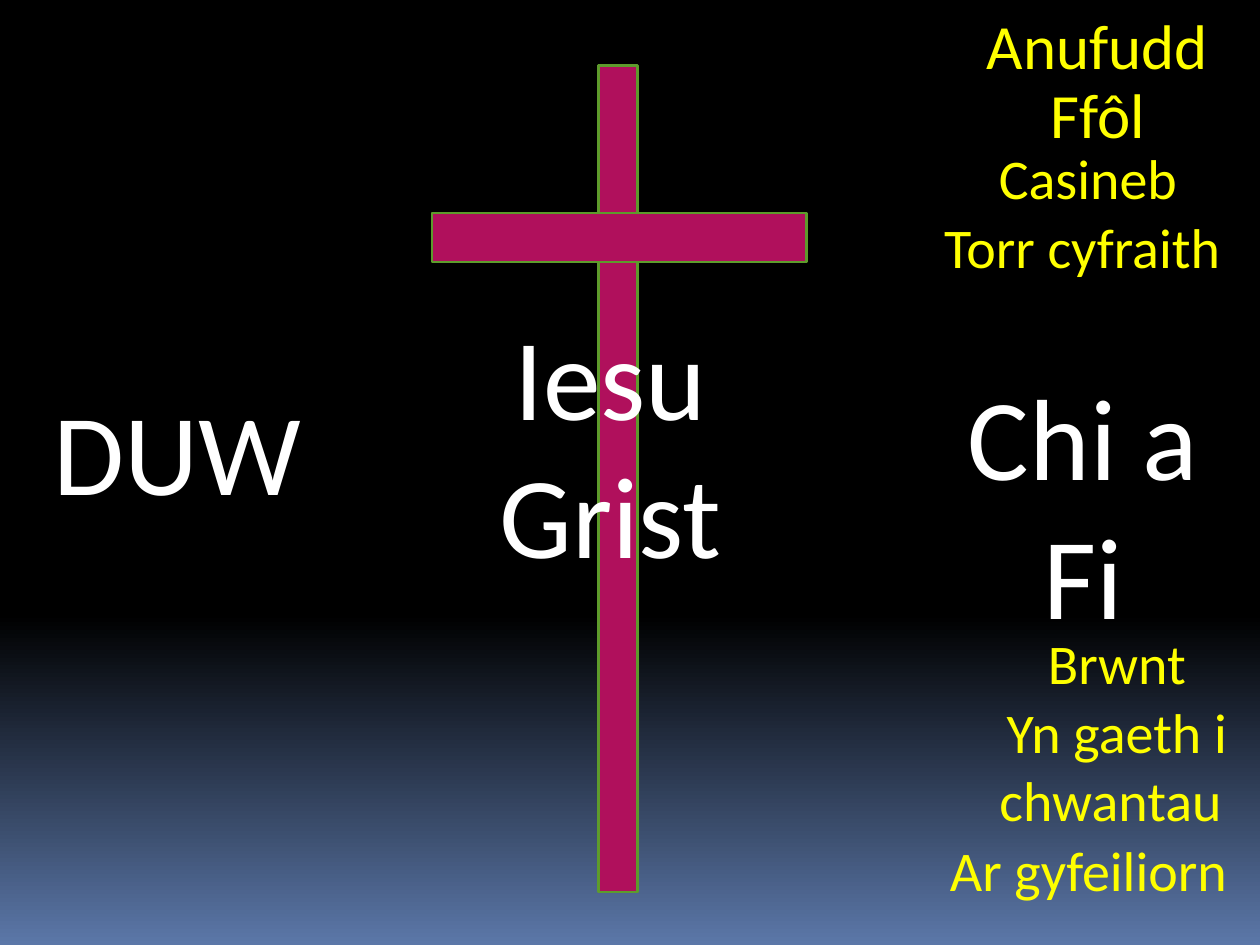
from pptx import Presentation
from pptx.dml.color import RGBColor
from pptx.enum.shapes import MSO_SHAPE
from pptx.enum.text import MSO_AUTO_SIZE, PP_ALIGN
from pptx.util import Inches, Pt

BLACK = RGBColor(0x00, 0x00, 0x00)
BLUE = RGBColor(0x5B, 0x77, 0xA8)
CRIMSON = RGBColor(0xB0, 0x10, 0x5C)
GREEN = RGBColor(0x5E, 0x9B, 0x2C)
WHITE = RGBColor(0xFF, 0xFF, 0xFF)
YELLOW = RGBColor(0xFF, 0xFF, 0x00)

# left, top, width, height
CROSS_BARS = [(4.75, 0.52, 0.31, 6.56), (3.43, 1.69, 2.97, 0.39)]

# text, size, colour, (left, top, width, height)
LABELS = [
    ("DUW", 66, WHITE, (0, 2.97, 2.81, 1.21)),
    ("Chi a Fi", 66, WHITE, (7.19, 2.85, 2.81, 2.32)),
    ("Iesu Grist", 66, WHITE, (3.44, 2.37, 2.81, 2.32)),
    ("Anufudd", 36, YELLOW, (7.42, 0, 2.58, 0.71)),
    ("Ffôl", 36, YELLOW, (7.66, 0.55, 2.11, 0.71)),
    ("Casineb", 32, YELLOW, (7.5, 1.09, 2.27, 0.64)),
    ("Brwnt", 32, YELLOW, (7.73, 4.94, 2.27, 0.64)),
    ("Torr cyfraith", 32, YELLOW, (7.34, 1.64, 2.5, 0.64)),
    ("Ar gyfeiliorn", 32, YELLOW, (7.28, 6.58, 2.72, 0.64)),
    ("Yn gaeth i chwantau ", 32, YELLOW, (7.73, 5.49, 2.27, 1.18)),
]


def set_background(s):
    fill = s.background.fill
    fill.gradient()
    fill.gradient_angle = 270
    for stop, (position, color) in zip(fill.gradient_stops, [(0.65, BLACK), (1, BLUE)]):
        stop.position = position
        stop.color.rgb = color


def add_cross(s):
    group = s.shapes.add_group_shape()
    for box in CROSS_BARS:
        sp = group.shapes.add_shape(MSO_SHAPE.RECTANGLE, *map(Inches, box))
        sp.shadow.inherit = False
        sp.fill.solid()
        sp.fill.fore_color.rgb = CRIMSON
        sp.line.color.rgb = GREEN
        sp.line.width = Pt(1.5)


def add_label(s, text, size, color, box):
    tf = s.shapes.add_textbox(*map(Inches, box)).text_frame
    tf.word_wrap = True
    tf.auto_size = MSO_AUTO_SIZE.SHAPE_TO_FIT_TEXT
    p = tf.paragraphs[0]
    p.alignment = PP_ALIGN.CENTER
    r = p.add_run()
    r.text = text
    for name, value in {"name": "Calibri", "size": Pt(size)}.items():
        setattr(r.font, name, value)
    r.font.color.rgb = color


def main():
    prs = Presentation()
    prs.slide_width, prs.slide_height = Inches(10), Inches(7.5)
    s = prs.slides.add_slide(prs.slide_layouts[6])
    set_background(s)
    add_cross(s)
    for label in LABELS:
        add_label(s, *label)
    prs.save("out.pptx")


if __name__ == "__main__":
    main()
